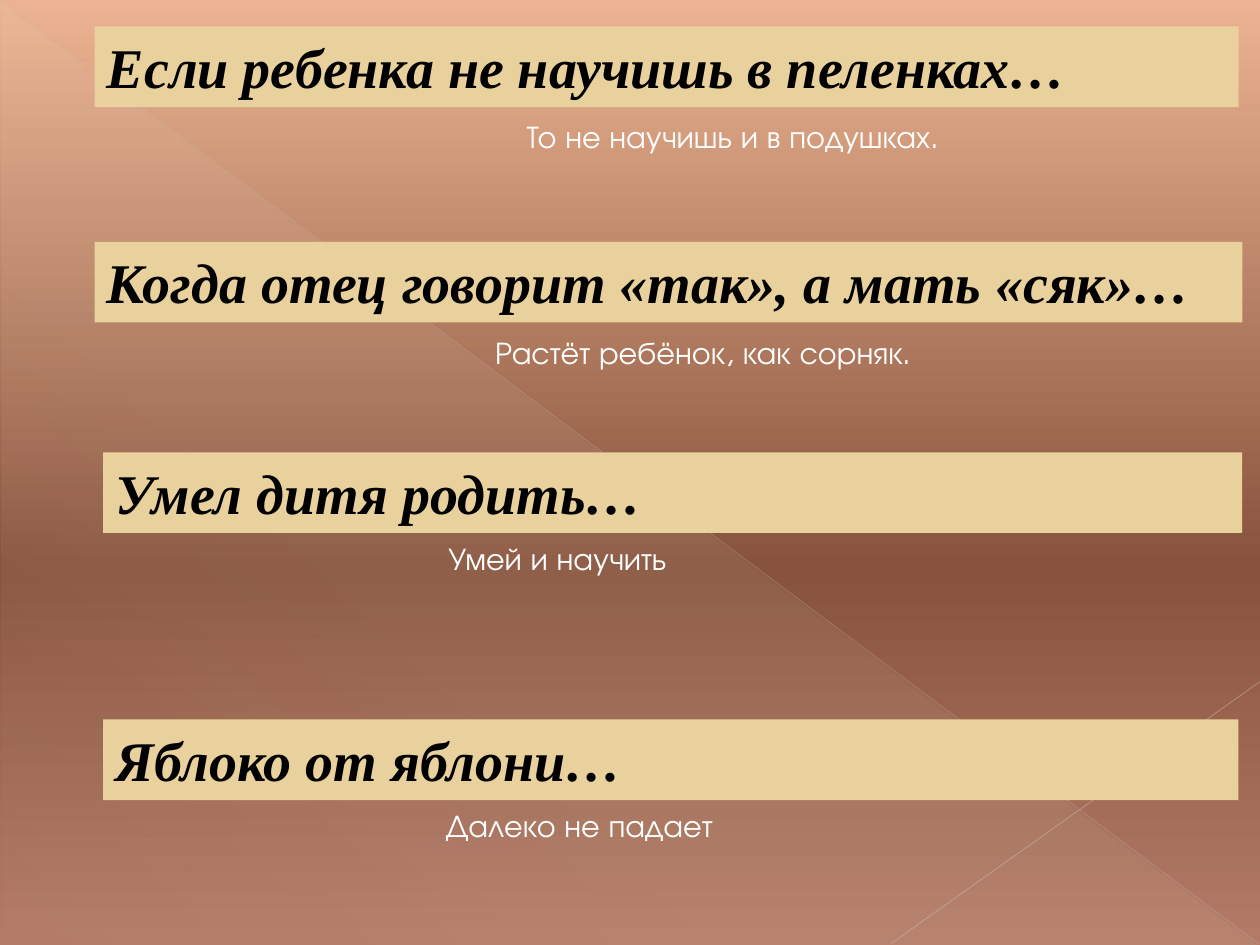
from lxml.etree import SubElement
from pptx import Presentation
from pptx.dml.color import RGBColor
from pptx.enum.shapes import MSO_CONNECTOR, MSO_SHAPE
from pptx.enum.text import MSO_ANCHOR, MSO_AUTO_SIZE, PP_ALIGN
from pptx.oxml.ns import qn
from pptx.util import Pt

COLORS = {
    "sky": "EBB391", "earth": "88533D", "clay": "B37B67", "haze": "EBDDC3",
    "diagonal": "C8BCB8", "corner": "CEC3BF", "banner": "E8D19D",
    "ink": "000000", "outline": "A17C36", "reply": "FFFFFF",
}
OPENING_FONT = {"name": "Times New Roman", "size": Pt(32), "bold": True, "italic": True}
REPLY_FONT = {"name": "TeX Gyre Adventor", "size": Pt(18)}
FRAME = {"word_wrap": True, "auto_size": MSO_AUTO_SIZE.SHAPE_TO_FIT_TEXT,
         "vertical_anchor": MSO_ANCHOR.TOP}
BANNER_HEIGHT = 46.1


class ProverbSlide:
    """Holds the colours and the slide that the elements are drawn on."""

    def __init__(self, slide, colors):
        self.slide = slide
        self.colors = colors

    def rgb(self, color):
        return RGBColor.from_string(self.colors[color])

    def apply(self, target, values):
        for attribute, value in values.items():
            setattr(target, attribute, value)

    def gradient(self, fill, owner, stops, angle):
        fill.gradient()
        gradient = owner.find(".//" + qn("a:gradFill"))
        stop_list = gradient.find(qn("a:gsLst"))
        stop_list.clear()
        for position, color, opacity in stops:
            stop = SubElement(stop_list, qn("a:gs"), pos=str(position * 1000))
            tint = SubElement(stop, qn("a:srgbClr"), val=self.colors[color])
            if opacity < 100:
                SubElement(tint, qn("a:alpha"), val=str(opacity * 1000))
        gradient.find(qn("a:lin")).set("ang", str(angle * 60000))

    def background(self, stops, angle):
        self.gradient(self.slide.background.fill, self.slide.element, stops, angle)

    def shape(self, preset, left, top, width, height):
        shape = self.slide.shapes.add_shape(preset, Pt(left), Pt(top), Pt(width), Pt(height))
        shape.shadow.inherit = False
        shape.line.fill.background()
        return shape

    def triangle(self, left, top, width, height, stops, angle):
        triangle = self.shape(MSO_SHAPE.RIGHT_TRIANGLE, left, top, width, height)
        self.gradient(triangle.fill, triangle.element, stops, angle)

    def line(self, start, end, color, width, opacity):
        line = self.slide.shapes.add_connector(
            MSO_CONNECTOR.STRAIGHT, *(Pt(value) for value in (*start, *end)))
        line.line.width = Pt(width)
        line.line.color.rgb = self.rgb(color)
        properties = line.element.spPr
        tint = properties.find(".//" + qn("a:srgbClr"))
        SubElement(tint, qn("a:alpha"), val=str(opacity * 1000))
        SubElement(properties, qn("a:effectLst"))

    def wording(self, frame, text, font, color):
        self.apply(frame, FRAME)
        paragraph = frame.paragraphs[0]
        paragraph.alignment = PP_ALIGN.LEFT
        run = paragraph.add_run()
        run.text = text
        self.apply(run.font, font)
        run.font.color.rgb = self.rgb(color)
        return paragraph

    def banner(self, left, top, width, text):
        banner = self.shape(MSO_SHAPE.RECTANGLE, left, top, width, BANNER_HEIGHT)
        banner.fill.solid()
        banner.fill.fore_color.rgb = self.rgb("banner")
        self.wording(banner.text_frame, text, OPENING_FONT, "ink")
        properties = banner.element.find(".//" + qn("a:rPr"))
        outline = SubElement(properties, qn("a:ln"), w=str(Pt(0.75)))
        SubElement(SubElement(outline, qn("a:solidFill")), qn("a:srgbClr"),
                   val=self.colors["outline"])
        properties.insert(0, outline)

    def reply(self, left, top, width, height, text):
        box = self.slide.shapes.add_textbox(Pt(left), Pt(top), Pt(width), Pt(height))
        self.wording(box.text_frame, text, REPLY_FONT, "reply")


def main():
    presentation = Presentation()
    presentation.slide_width, presentation.slide_height = Pt(720), Pt(540)
    page = ProverbSlide(presentation.slides.add_slide(presentation.slide_layouts[6]), COLORS)

    page.background([(0, "sky", 100), (60, "earth", 100), (100, "clay", 100)], 90)
    page.triangle(0.7, 1.4, 718.6, 538.6,
                  [(0, "haze", 10), (70, "haze", 8), (100, "haze", 1)], 133)
    page.line((0, 0.7), (719.3, 539.3), "diagonal", 0.39, 35)
    page.line((720, 389.5), (509, 539.3), "corner", 0.47, 45)

    proverbs = [
        ((54, 15.1, 653.8), "Если ребенка не научишь в пеленках…",
         (293.8, 2.2, 411.8, 28.8), "То не научишь и в подушках."),
        ((54, 138.2, 655.9), "Когда отец говорит «так», а мать «сяк»…",
         (275.8, 2.2, 436.3, 51.1), "Растёт ребёнок, как сорняк."),
        ((59, 258.5, 650.9), "Умел дитя родить…",
         (249.1, 0, 460.8, 28.8), "Умей и научить"),
        ((59, 411.1, 648.7), "Яблоко от яблони…",
         (247.7, 0, 462.2, 28.8), "Далеко не падает"),
    ]
    for (left, top, width), opening, (indent, gap, span, height), ending in proverbs:
        page.banner(left, top, width, opening)
        page.reply(indent, top + BANNER_HEIGHT + gap, span, height, ending)

    presentation.save("out.pptx")


if __name__ == "__main__":
    main()
